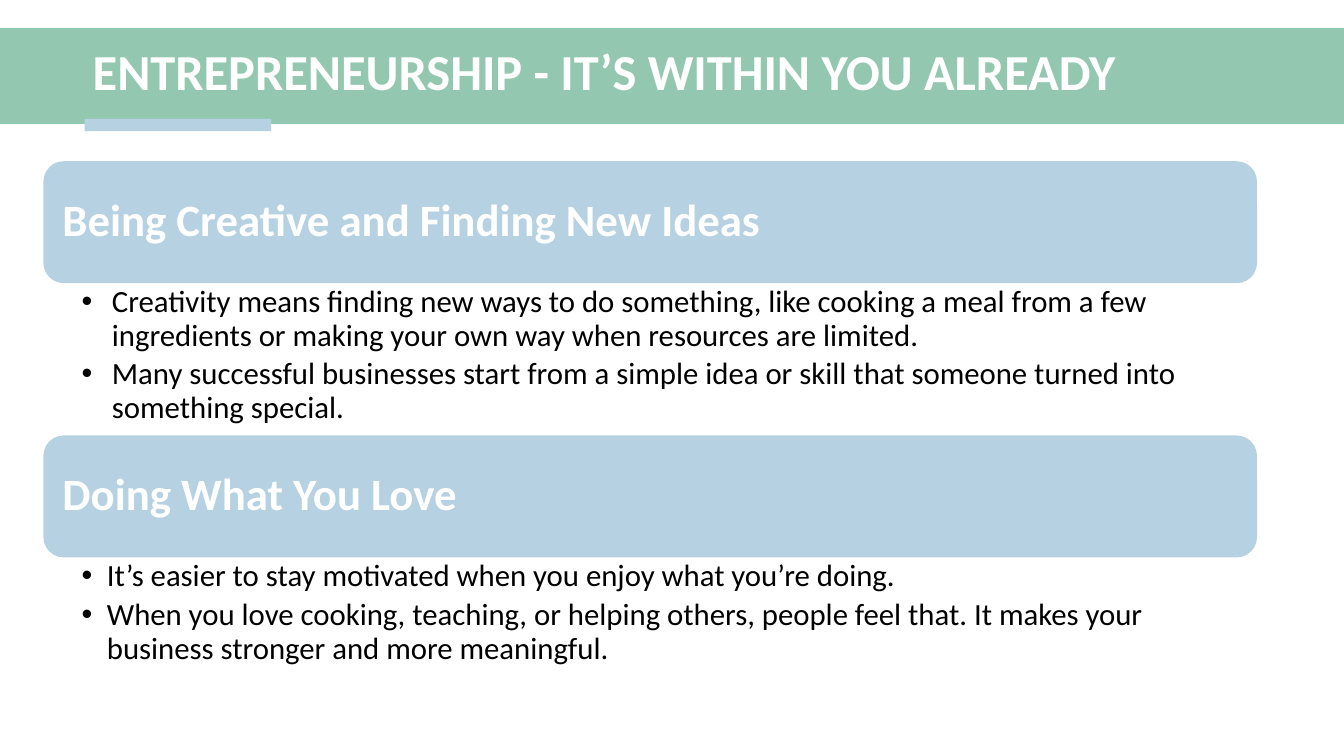
from lxml.etree import SubElement
from pptx import Presentation
from pptx.dml.color import RGBColor
from pptx.enum.shapes import MSO_SHAPE
from pptx.enum.text import MSO_ANCHOR, MSO_AUTO_SIZE, PP_ALIGN
from pptx.oxml.ns import qn
from pptx.util import Inches, Pt

THEME = {
    "green": RGBColor.from_string("94C7B0"),
    "blue": RGBColor.from_string("B6D1E1"),
    "title": {"name": "Calibri", "size": Pt(36), "bold": True, "color": RGBColor.from_string("FFFFFF")},
    "heading": {"name": "Calibri", "size": Pt(32), "bold": True, "color": RGBColor.from_string("FFFFFF")},
    "bullet": {"name": "Calibri", "size": Pt(22), "bold": False, "color": RGBColor.from_string("000000")},
}
SECTIONS = [
    ("Being Creative and Finding New Ideas", 20, 0.3, [
        "Creativity means finding new ways to do something, like cooking a meal from a few ingredients or making your own way when resources are limited.",
        "Many successful businesses start from a simple idea or skill that someone turned into something special.",
    ]),
    ("Doing What You Love", 15.6, 0.25, [
        "It’s easier to stay motivated when you enjoy what you’re doing.",
        "When you love cooking, teaching, or helping others, people feel that. It makes your business stronger and more meaningful.",
    ]),
]
SECTION_LEFT, SECTION_WIDTH = 3.23, 90.3
FIRST_TOP, HEADING_HEIGHT, SECTION_PITCH = 21.33, 16.13, 36.27

deck = Presentation()
deck.slide_width, deck.slide_height = Inches(13.33), Inches(7.5)
slide = deck.slides.add_slide(deck.slide_layouts[5])


def percent_box(left, top, width, height):
    across, down = deck.slide_width / 100, deck.slide_height / 100
    return [round(n) for n in (left * across, top * down, width * across, height * down)]


def write(paragraph, words, style):
    paragraph.text = words
    paragraph.alignment = PP_ALIGN.LEFT
    paragraph.line_spacing = 0.9
    for key, value in THEME[style].items():
        if key == "color":
            paragraph.font.color.rgb = value
        else:
            setattr(paragraph.font, key, value)


blocks = [
    (MSO_SHAPE.RECTANGLE, (0, 3.73, 100, 12.67), "green", None),
    (MSO_SHAPE.RECTANGLE, (6.3, 15.73, 13.88, 1.6), "blue", None),
]
for row, (heading, *_) in enumerate(SECTIONS):
    place = (SECTION_LEFT, FIRST_TOP + row * SECTION_PITCH, SECTION_WIDTH, HEADING_HEIGHT)
    blocks.append((MSO_SHAPE.ROUNDED_RECTANGLE, place, "blue", heading))

for outline, place, color, heading in blocks:
    panel = slide.shapes.add_shape(outline, *percent_box(*place))
    panel.shadow.inherit = False
    panel.fill.solid()
    panel.fill.fore_color.rgb = THEME[color]
    panel.line.fill.background()
    if heading:
        for side in ("left", "right", "top", "bottom"):
            setattr(panel.text_frame, f"margin_{side}", Inches(0.13))
        panel.text_frame.vertical_anchor = MSO_ANCHOR.MIDDLE
        write(panel.text_frame.paragraphs[0], heading, "heading")

title = slide.shapes.title
title.element.getparent().append(title.element)
title.left, title.top, title.width, title.height = percent_box(6.15, 4.53, 89.48, 10.53)
title_format = {"vertical_anchor": MSO_ANCHOR.MIDDLE, "word_wrap": True, "auto_size": MSO_AUTO_SIZE.NONE}
for key, value in title_format.items():
    setattr(title.text_frame, key, value)
write(title.text_frame.paragraphs[0], "ENTREPRENEURSHIP - IT’S WITHIN YOU ALREADY", "title")

bullet_format = {
    "word_wrap": True,
    "vertical_anchor": MSO_ANCHOR.TOP,
    "margin_left": Inches(0.38),
    "margin_right": Inches(0.17),
    "margin_top": Inches(0.03),
    "margin_bottom": Inches(0.03),
}
for row, (_, height, indent, points) in enumerate(SECTIONS):
    top = FIRST_TOP + row * SECTION_PITCH + HEADING_HEIGHT
    details = slide.shapes.add_textbox(*percent_box(SECTION_LEFT, top, SECTION_WIDTH, height)).text_frame
    for key, value in bullet_format.items():
        setattr(details, key, value)
    for position, point in enumerate(points):
        paragraph = details.add_paragraph() if position else details.paragraphs[0]
        properties = paragraph._p.get_or_add_pPr()
        properties.set("marL", str(Inches(indent)))
        properties.set("indent", str(-Inches(indent)))
        SubElement(properties, qn("a:buFont"), typeface="Arial")
        SubElement(properties, qn("a:buChar"), char="•")
        write(paragraph, point, "bullet")
        paragraph.level = 1
        paragraph.space_after = Pt(4)

deck.save("out.pptx")
